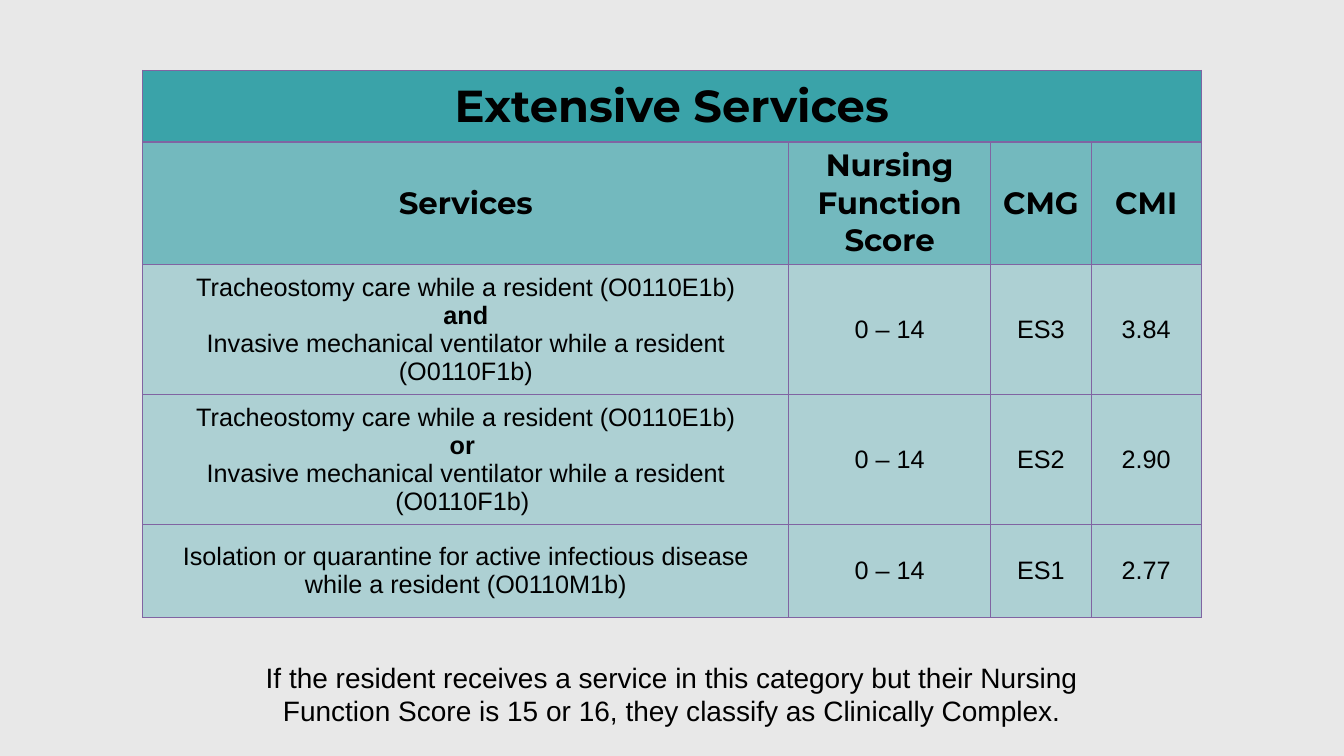
from lxml import etree
from pptx import Presentation
from pptx import util as u
from pptx.dml import color
from pptx.enum import text
from pptx.oxml import ns

COLORS = {"background": "E8E8E8", "teal": "008C95", "border": "8064A2", "text": "000000"}
HEADING_FONT, BODY_FONT = "Montserrat", "Arial"

COLUMN_WIDTHS = [461.5, 144, 72, 78.5]
ROW_HEIGHTS = [51.1, 85.7, 92.9, 92.9, 66.2]
TRACHEOSTOMY = "Tracheostomy care while a resident (O0110E1b)"
VENTILATOR = "Invasive mechanical ventilator while a resident (O0110F1b)"
ROWS = [
    ["Extensive Services"],
    ["Services", "Nursing\nFunction Score", "CMG", "CMI"],
    [f"{TRACHEOSTOMY}\nand\n{VENTILATOR}", "0 – 14", "ES3", "3.84"],
    [f"{TRACHEOSTOMY}\nor \n{VENTILATOR} ", "0 – 14", "ES2", "2.90"],
    ["Isolation or quarantine for active infectious disease while a resident (O0110M1b)",
     "0 – 14", "ES1", "2.77"],
]
# Font, size, bold and fill opacity in percent
TITLE_STYLE = (HEADING_FONT, 32, True, 75)
HEADER_STYLE = (HEADING_FONT, 22, True, 50)
BODY_STYLE = (BODY_FONT, 18, False, 25)
ROW_STYLES = [TITLE_STYLE, HEADER_STYLE] + [BODY_STYLE] * 3
NOTE = ("If the resident receives a service in this category but their Nursing\n"
        "Function Score is 15 or 16, they classify as Clinically Complex.")


def rgb(name):
    return color.RGBColor.from_string(COLORS[name])


def write_text(text_frame, content, font_name, size, bold=False):
    text_frame.text = content
    for paragraph in text_frame.paragraphs:
        paragraph.alignment = text.PP_ALIGN.CENTER
        for run in paragraph.runs:
            run.font.name = font_name
            run.font.size = u.Pt(size)
            run.font.bold = bold or run.text.strip() in ("and", "or")
            run.font.color.rgb = rgb("text")


def paint_cell(cell, opacity):
    cell.fill.solid()
    cell.fill.fore_color.rgb = rgb("teal")
    properties = cell._tc.get_or_add_tcPr()
    fill_color = properties.find(".//" + ns.qn("a:srgbClr"))
    etree.SubElement(fill_color, ns.qn("a:alpha"), val=str(opacity * 1000))
    # Borders stand before the fill
    for index, side in enumerate(("a:lnL", "a:lnR", "a:lnT", "a:lnB")):
        line = etree.Element(ns.qn(side), w=str(u.Pt(1)))
        solid = etree.SubElement(line, ns.qn("a:solidFill"))
        etree.SubElement(solid, ns.qn("a:srgbClr"), val=COLORS["border"])
        properties.insert(index, line)


def add_services_table(slide, left, top, width, height):
    frame = slide.shapes.add_table(len(ROWS), len(COLUMN_WIDTHS), u.Pt(left), u.Pt(top),
                                   u.Pt(width), u.Pt(height))
    table = frame.table
    table.first_row = table.horz_banding = False
    for column, column_width in zip(table.columns, COLUMN_WIDTHS):
        column.width = u.Pt(column_width)
    for row, row_height in zip(table.rows, ROW_HEIGHTS):
        row.height = u.Pt(row_height)
    table.cell(0, 0).merge(table.cell(0, len(COLUMN_WIDTHS) - 1))

    for row, values, style in zip(table.rows, ROWS, ROW_STYLES):
        font_name, size, bold, opacity = style
        for cell in row.cells:
            paint_cell(cell, opacity)
        for cell, value in zip(row.cells, values):
            cell.vertical_anchor = text.MSO_ANCHOR.MIDDLE
            write_text(cell.text_frame, value, font_name, size, bold)


def add_note(slide, left, top, width, height):
    box = slide.shapes.add_textbox(u.Pt(left), u.Pt(top), u.Pt(width), u.Pt(height))
    box.text_frame.word_wrap = True
    write_text(box.text_frame, NOTE, BODY_FONT, 20)


def main():
    presentation = Presentation()
    presentation.slide_width, presentation.slide_height = u.Pt(960), u.Pt(540)
    slide = presentation.slides.add_slide(presentation.slide_layouts[6])
    slide.background.fill.solid()
    slide.background.fill.fore_color.rgb = rgb("background")

    # Table of services and the note below it
    add_services_table(slide, 102, 50.4, sum(COLUMN_WIDTHS), sum(ROW_HEIGHTS))
    add_note(slide, 114.5, 468, 731, 72)
    presentation.save("out.pptx")


if __name__ == "__main__":
    main()
